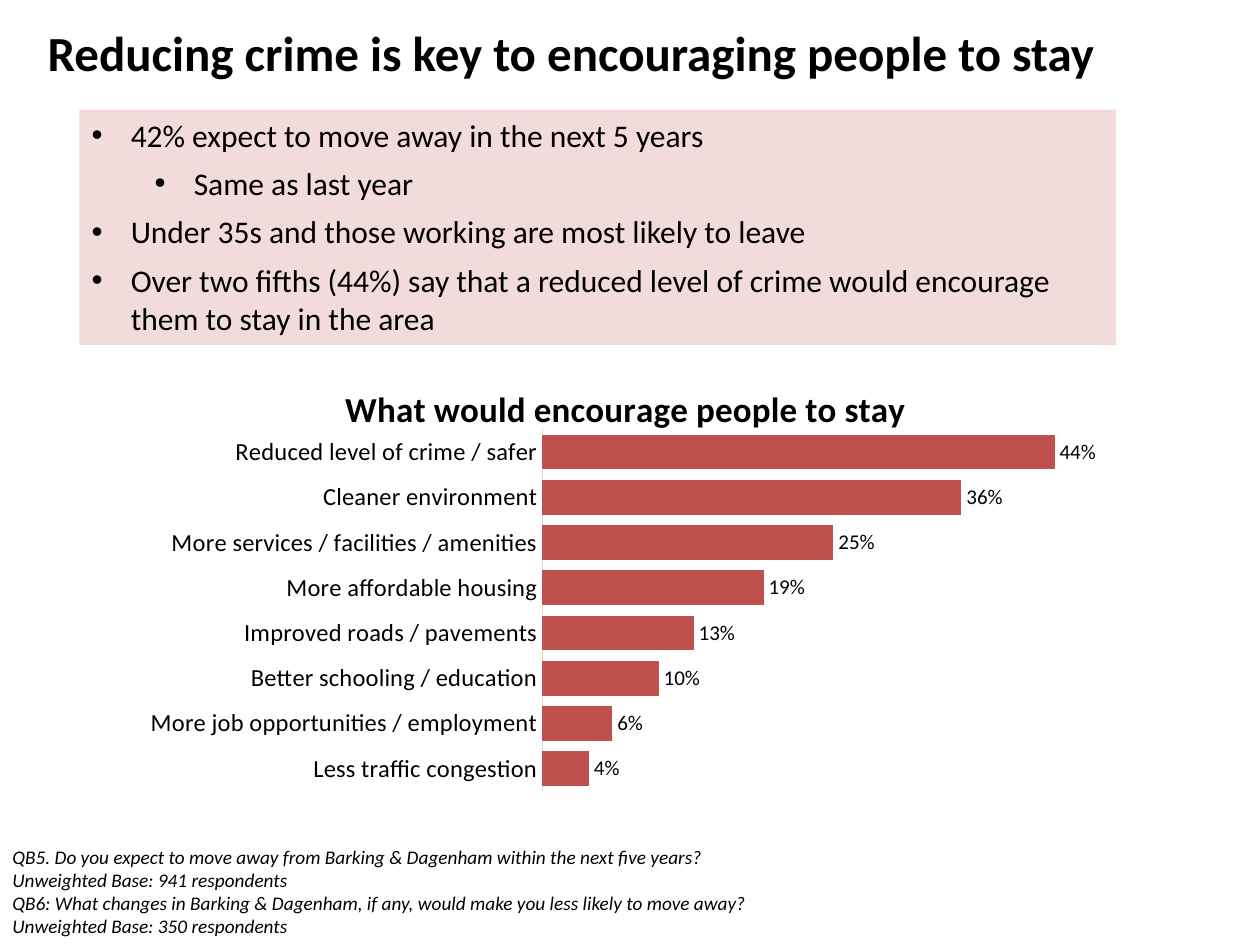
from pptx import Presentation
from pptx.chart.data import CategoryChartData
from pptx.dml.color import RGBColor
from pptx.enum.chart import XL_CHART_TYPE as ChartType, XL_LABEL_POSITION as LabelPos
from pptx.enum.chart import XL_TICK_MARK as Tick
from pptx.enum.shapes import MSO_SHAPE as Shape
from pptx.enum.text import MSO_ANCHOR as Anchor, PP_ALIGN as Align
from pptx.oxml import parse_xml
from pptx.oxml.ns import nsdecls
from pptx.util import Inches, Pt

BLACK = RGBColor(0x00, 0x00, 0x00)
PINK = RGBColor(0xF2, 0xDC, 0xDB)
RED = RGBColor(0xC0, 0x50, 0x4D)
GREY = RGBColor(0xD9, 0xD9, 0xD9)

REASONS = {
    "Reduced level of crime / safer": 0.44,
    "Cleaner environment": 0.36,
    "More services / facilities / amenities": 0.25,
    "More affordable housing": 0.19,
    "Improved roads / pavements": 0.13,
    "Better schooling / education": 0.10,
    "More job opportunities / employment": 0.06,
    "Less traffic congestion": 0.04,
}
# Plot area as shares of the chart
PLOT = {"x": 0.42, "y": 0.15, "w": 0.56, "h": 0.8}


class SlideBuilder:
    """Holds the style and the current slide; boxes are percent of slide size."""

    font = "Calibri"
    indent = Inches(0.31)
    level_step = Inches(0.5)

    def __init__(self, prs):
        self.prs = prs
        self.slide = prs.slides.add_slide(prs.slide_layouts[6])

    def place(self, x, y, w, h):
        W, H = self.prs.slide_width, self.prs.slide_height
        return [int(v * side / 100) for v, side in ((x, W), (y, H), (w, W), (h, H))]

    def style(self, font, **values):
        font.color.rgb = BLACK
        for name, value in {"name": self.font, **values}.items():
            setattr(font, name, value)

    def fill_text(self, tf, lines, anchor=Anchor.TOP, **values):
        tf.word_wrap = True
        tf.vertical_anchor = anchor
        for i, line in enumerate(lines):
            p = tf.paragraphs[0] if i == 0 else tf.add_paragraph()
            p.alignment = Align.LEFT
            r = p.add_run()
            r.text = line
            self.style(r.font, **values)

    def text(self, box, lines, **values):
        sp = self.slide.shapes.add_textbox(*self.place(*box))
        self.fill_text(sp.text_frame, lines, **values)

    def bullet_panel(self, box, items, fill, **values):
        sp = self.slide.shapes.add_shape(Shape.RECTANGLE, *self.place(*box))
        sp.shadow.inherit = False
        sp.fill.solid()
        sp.fill.fore_color.rgb = fill
        sp.line.fill.background()
        tf = sp.text_frame
        self.fill_text(tf, [line for line, _ in items], **values)
        for i, (p, (_, level)) in enumerate(zip(tf.paragraphs, items)):
            p.level = level
            p.space_before = Pt(6 if i else 0)
            pPr = p._p.get_or_add_pPr()
            pPr.set("marL", str(self.indent + level * self.level_step))
            pPr.set("indent", str(-self.indent))
            for tag in ('buFont typeface="Arial"', 'buChar char="•"'):
                name, attr = tag.split(" ")
                pPr.append(parse_xml(f"<a:{name} {nsdecls('a')} {attr}/>"))

    def bar_chart(self, box, title, values, color):
        data = CategoryChartData(number_format="0%")
        data.categories = values.keys()
        data.add_series("Series 1", values.values())
        chart = self.slide.shapes.add_chart(
            ChartType.BAR_CLUSTERED, *self.place(*box), data).chart
        chart.has_legend = False
        self.style(chart.font, name="Arial", size=Pt(10))

        # Title
        chart.has_title = True
        tf = chart.chart_title.text_frame
        tf.text = title
        self.style(tf.paragraphs[0].runs[0].font, size=Pt(20), bold=True)
        chart.chart_title.include_in_layout = False

        # Axes
        cat, val = chart.category_axis, chart.value_axis
        cat.reverse_order = True
        cat.major_tick_mark = cat.minor_tick_mark = Tick.NONE
        cat.format.line.color.rgb = GREY
        cat.format.line.width = Pt(0.75)
        self.style(cat.tick_labels.font, size=Pt(14))
        val.minimum_scale, val.maximum_scale = 0, 0.5
        val.has_major_gridlines = False
        val.visible = False

        # Bars and their labels
        plot = chart.plots[0]
        plot.gap_width = 30
        plot.vary_by_categories = False
        fill = plot.series[0].format.fill
        fill.solid()
        fill.fore_color.rgb = color
        labels = plot.series[0].data_labels
        for name, value in {"show_value": True, "position": LabelPos.OUTSIDE_END,
                            "number_format": "0%",
                            "number_format_is_linked": False}.items():
            setattr(labels, name, value)
        self.style(labels.font, size=Pt(12))

        # Fixed inner plot area
        area = chart._chartSpace.chart.plotArea
        for old in area.findall("{*}layout"):
            area.remove(old)
        sizes = "".join(f'<c:{k} val="{v}"/>' for k, v in PLOT.items())
        area.insert(0, parse_xml(
            f'<c:layout {nsdecls("c")}><c:manualLayout><c:layoutTarget val="inner"/>'
            f'<c:xMode val="edge"/><c:yMode val="edge"/>{sizes}'
            '</c:manualLayout></c:layout>'))


def main():
    prs = Presentation()
    prs.slide_width, prs.slide_height = Inches(10), Inches(7.5)
    s = SlideBuilder(prs)

    # Source questions
    s.text((0, 88.8, 63.2, 11.2), [
        "QB5. Do you expect to move away from Barking & Dagenham within the next five years?",
        "Unweighted Base: 941 respondents",
        "QB6: What changes in Barking & Dagenham, if any, would make you less likely "
        "to move away? Unweighted Base: 350 respondents",
    ], size=Pt(11), italic=True)

    # Heading
    s.text((2.8, 1.33, 97.2, 8.4),
           ["Reducing crime is key to encouraging people to stay"],
           anchor=Anchor.MIDDLE, size=Pt(28), bold=True)

    # Key findings
    s.bullet_panel((6.3, 11.6, 82.3, 24.93), [
        ("42% expect to move away in the next 5 years", 0),
        ("Same as last year", 1),
        ("Under 35s and those working are most likely to leave", 0),
        ("Over two fifths (44%) say that a reduced level of crime would encourage "
         "them to stay in the area", 0),
    ], PINK, size=Pt(18))

    # Reasons to stay
    s.bar_chart((8.4, 38.27, 82.5, 47.87),
                "What would encourage people to stay", REASONS, RED)

    prs.save("out.pptx")


if __name__ == "__main__":
    main()
